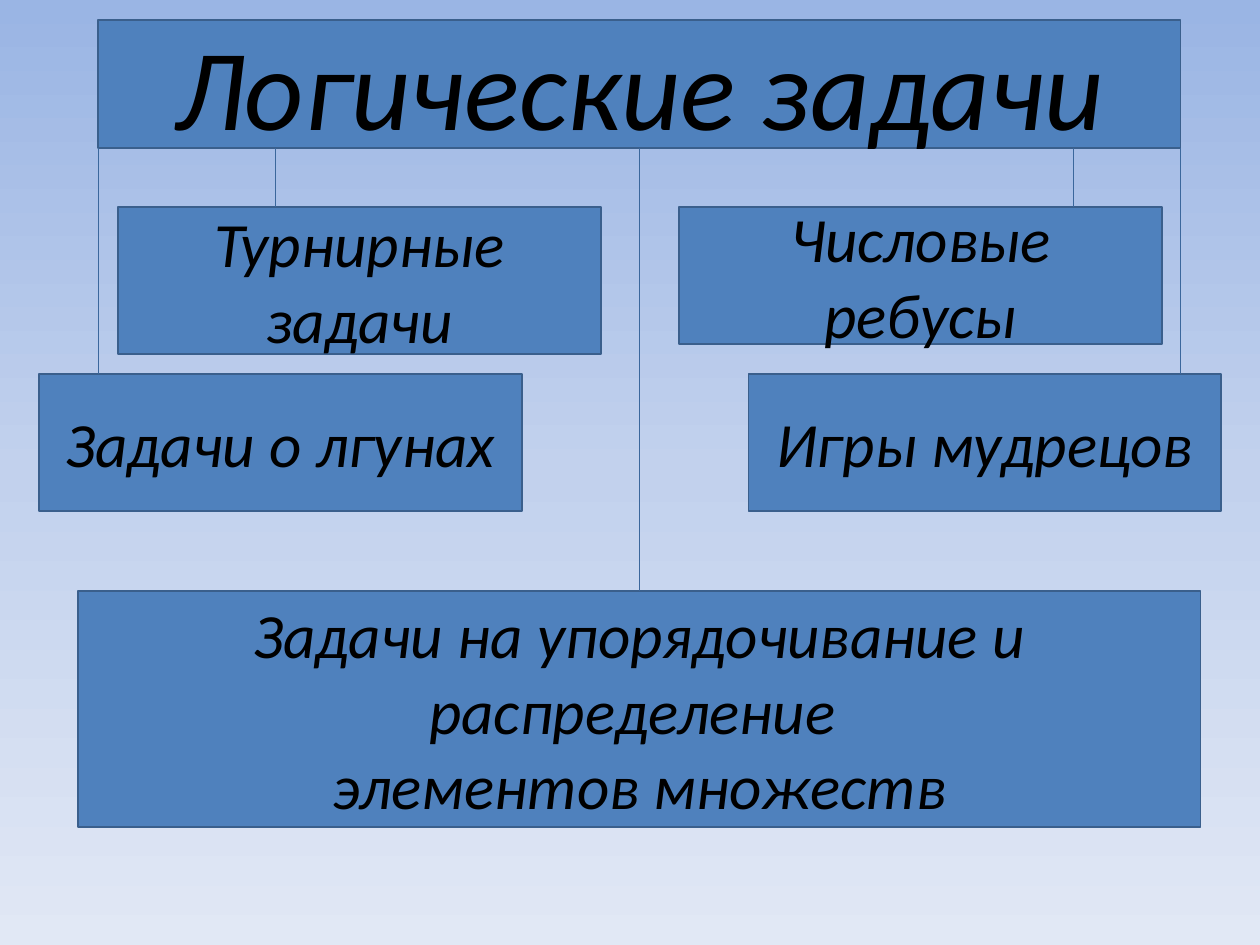
from copy import deepcopy
from dataclasses import dataclass
from typing import Optional

from lxml.etree import SubElement
from pptx import Presentation
from pptx.dml.color import RGBColor
from pptx.enum.shapes import MSO_CONNECTOR as Connector, MSO_SHAPE as Shape
from pptx.enum.text import MSO_ANCHOR as Anchor, MSO_AUTO_SIZE as AutoSize, PP_ALIGN as Align
from pptx.oxml.ns import qn
from pptx.util import Cm, Pt

BOX_FILL = RGBColor(0x4F, 0x81, 0xBD)
BOX_LINE = RGBColor(0x3A, 0x5F, 0x8C)
LINK_LINE = RGBColor(0x3B, 0x67, 0x9C)
TEXT = RGBColor(0, 0, 0)
BACKGROUND_STOPS = (
    (0, RGBColor(0x9A, 0xB5, 0xE4)),
    (0.5, RGBColor(0xC2, 0xD1, 0xED)),
    (1, RGBColor(0xE1, 0xE8, 0xF5)),
)
FONT = "Calibri"
BOTTOM, TOP = 2, 0


@dataclass(frozen=True)
class Box:
    """A labelled rectangle in cm; link_x is None when the link joins its middle."""
    lines: tuple[str, ...]
    left: float
    top: float
    width: float
    height: float
    link_x: Optional[float] = None
    size: int = 36


TITLE = Box(("Логические задачи",), 1.98, 0.41, 21.82, 2.57, size=66)
TOPICS = (
    Box(("Задачи о лгунах",), 0.79, 7.54, 9.73, 2.77, link_x=TITLE.left),
    Box(("Игры мудрецов",), 15.09, 7.54, 9.53, 2.77, link_x=TITLE.left + TITLE.width),
    Box(("Задачи на упорядочивание и распределение ", "элементов множеств"),
        1.58, 11.91, 22.62, 4.77),
    Box(("Турнирные задачи",), 2.38, 4.17, 9.73, 2.97, link_x=5.56),
    Box(("Числовые ребусы",), 13.69, 4.17, 9.73, 2.77, link_x=21.64),
)


def paint_background(slide) -> None:
    fill = slide.background.fill
    fill.gradient()
    fill.gradient_angle = 270
    first_stop = fill.gradient_stops[0]._gs
    first_stop.addnext(deepcopy(first_stop))
    for stop, (position, color) in zip(fill.gradient_stops, BACKGROUND_STOPS):
        stop.position = position
        stop.color.rgb = color


def format_box(shape, box: Box) -> None:
    shape.left, shape.top = Cm(box.left), Cm(box.top)
    shape.width, shape.height = Cm(box.width), Cm(box.height)
    shape.fill.solid()
    shape.fill.fore_color.rgb = BOX_FILL
    shape.line.color.rgb = BOX_LINE
    shape.line.width = Pt(1)
    frame = shape.text_frame
    frame.word_wrap = True
    frame.auto_size = AutoSize.NONE
    frame.vertical_anchor = Anchor.MIDDLE
    for index, line in enumerate(box.lines):
        paragraph = frame.add_paragraph() if index else frame.paragraphs[0]
        paragraph.alignment = Align.CENTER
        run = paragraph.add_run()
        run.text = line
        run.font.name = FONT
        run.font.size = Pt(box.size)
        run.font.italic = True
        run.font.color.rgb = TEXT


def add_topic(slide, box: Box):
    shape = slide.shapes.add_shape(
        Shape.RECTANGLE, Cm(box.left), Cm(box.top), Cm(box.width), Cm(box.height))
    shape.shadow.inherit = False
    format_box(shape, box)
    return shape


def link_to_title(slide, title, topic, box: Box) -> None:
    x = Cm(box.link_x or box.left + box.width / 2)
    link = slide.shapes.add_connector(
        Connector.STRAIGHT, x, title.top + title.height, x, topic.top)
    if box.link_x is None:
        link.begin_connect(title, BOTTOM)
        link.end_connect(topic, TOP)
    link.line.color.rgb = LINK_LINE
    link.line.width = Pt(0.75)
    SubElement(link._element.spPr, qn("a:effectLst"))


def main() -> None:
    presentation = Presentation()
    presentation.slide_width, presentation.slide_height = Cm(25.4), Cm(19.05)
    slide = presentation.slides.add_slide(presentation.slide_layouts[5])
    paint_background(slide)
    title = slide.shapes.title
    format_box(title, TITLE)
    for box in TOPICS:
        topic = add_topic(slide, box)
        link_to_title(slide, title, topic, box)
    presentation.save("out.pptx")


if __name__ == "__main__":
    main()
